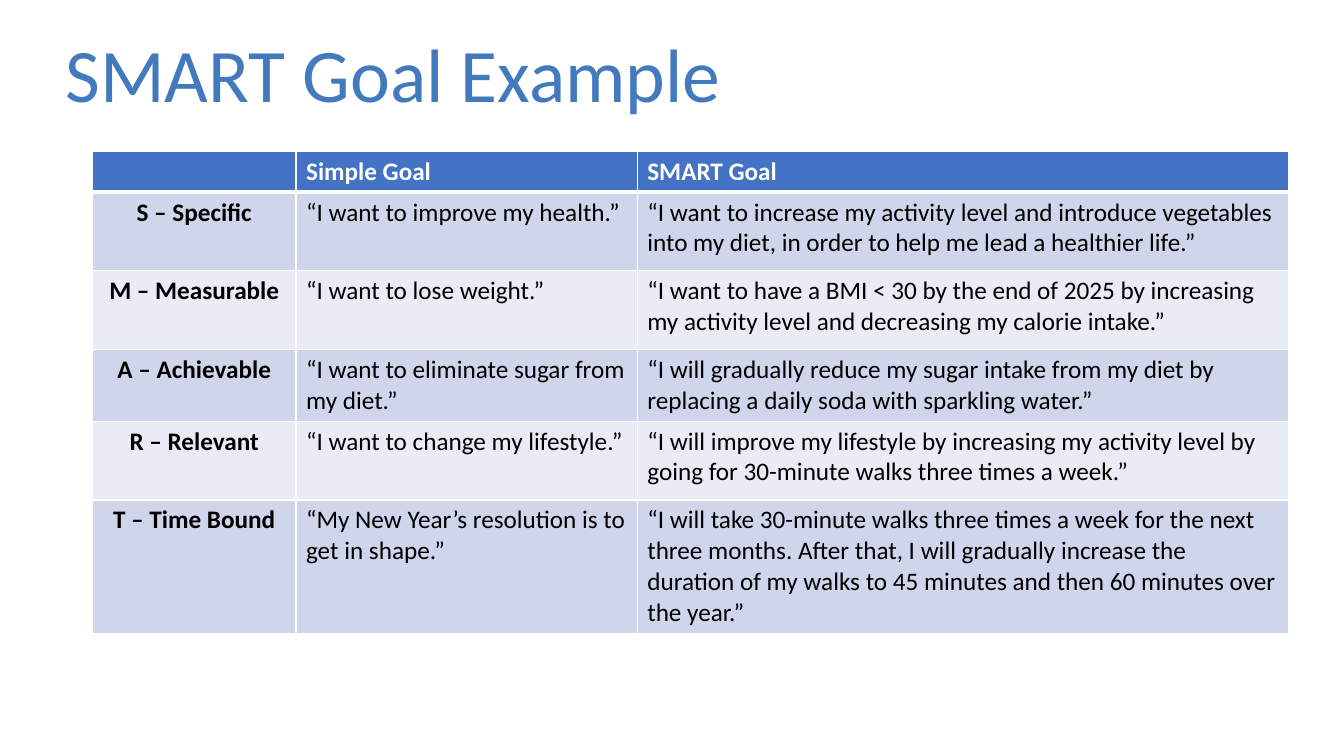
from lxml import etree
from pptx import Presentation, util as u
from pptx.dml import color
from pptx.enum import text
from pptx.oxml import ns

PX = 9525
FONT = "Calibri"
WHITE, BLACK = "FFFFFF", "000000"
TITLE_BLUE, HEADER_BLUE = "4379BD", "4472C4"
BANDS = ("CFD5EA", "E9EBF5")
COLUMN_WIDTHS = (194, 325, 620)
ROW_HEIGHTS = (38, 75, 75, 68, 75, 127)
GOALS = (
    ("", "Simple Goal", "SMART Goal"),
    ("S – Specific", "“I want to improve my health.”",
     "“I want to increase my activity level and introduce vegetables into my diet, "
     "in order to help me lead a healthier life.”"),
    ("M – Measurable", "“I want to lose weight.”",
     "“I want to have a BMI < 30 by the end of 2025 by increasing my activity level "
     "and decreasing my calorie intake.”"),
    ("A – Achievable", "“I want to eliminate sugar from my diet.”",
     "“I will gradually reduce my sugar intake from my diet by replacing a daily soda "
     "with sparkling water.”"),
    ("R – Relevant", "“I want to change my lifestyle.”",
     "“I will improve my lifestyle by increasing my activity level by going for "
     "30-minute walks three times a week.”"),
    ("T – Time Bound", "“My New Year’s resolution is to get in shape.”",
     "“I will take 30-minute walks three times a week for the next three months. "
     "After that, I will gradually increase the duration of my walks to 45 minutes "
     "and then 60 minutes over the year.”"),
)


def px(length):
    """Turn whole pixels into EMU."""
    return u.Emu(length * PX)


def rgb(hex_code):
    """Turn a hex string into a colour."""
    return color.RGBColor.from_string(hex_code)


def add_run(paragraph, words, size, hex_code, bold=False):
    """Add one formatted run to a paragraph."""
    run = paragraph.add_run()
    run.text = words
    run.font.name = FONT
    run.font.size = u.Pt(size)
    run.font.bold = bold
    run.font.color.rgb = rgb(hex_code)


def add_border(cell, side, points):
    """Draw one white side of a cell."""
    properties = cell._tc.get_or_add_tcPr()
    line = etree.SubElement(properties, ns.qn(f"a:ln{side}"), w=str(u.Pt(points)))
    solid = etree.SubElement(line, ns.qn("a:solidFill"))
    etree.SubElement(solid, ns.qn("a:srgbClr"), val=WHITE)


def format_cell(cell, words, row, column):
    """Fill a goal cell with its band, borders and words."""
    header = row == 0
    for side in "LRTB":
        thick = (side == "B" and header) or (side == "T" and row == 1)
        add_border(cell, side, 3 if thick else 1)
    cell.fill.solid()
    cell.fill.fore_color.rgb = rgb(HEADER_BLUE if header else BANDS[(row - 1) % 2])
    paragraph = cell.text_frame.paragraphs[0]
    if column == 0 and not header:
        paragraph.alignment = text.PP_ALIGN.CENTER
    if words:
        add_run(paragraph, words, 18, WHITE if header else BLACK, header or column == 0)


def add_title(slide, words):
    """Place and format the slide title."""
    title = slide.shapes.title
    title.left, title.top, title.width, title.height = map(px, (53, 5, 1104, 139))
    frame = title.text_frame
    frame.word_wrap = True
    frame.auto_size = text.MSO_AUTO_SIZE.NONE
    frame.vertical_anchor = text.MSO_ANCHOR.MIDDLE
    paragraph = frame.paragraphs[0]
    paragraph.alignment = text.PP_ALIGN.LEFT
    paragraph.line_spacing = 0.9
    add_run(paragraph, words, 54, TITLE_BLUE)


def add_goal_table(slide):
    """Add the table comparing simple and SMART goals."""
    bounds = map(px, (88, 144, sum(COLUMN_WIDTHS), sum(ROW_HEIGHTS)))
    goals = slide.shapes.add_table(len(GOALS), len(COLUMN_WIDTHS), *bounds).table
    for column, width in zip(goals.columns, COLUMN_WIDTHS):
        column.width = px(width)
    for row, height in zip(goals.rows, ROW_HEIGHTS):
        row.height = px(height)
    for row, entries in enumerate(GOALS):
        for column, words in enumerate(entries):
            format_cell(goals.cell(row, column), words, row, column)


def main():
    """Build and save the SMART goal slide."""
    deck = Presentation()
    deck.slide_width, deck.slide_height = px(1280), px(720)
    slide = deck.slides.add_slide(deck.slide_layouts[5])
    add_title(slide, "SMART Goal Example")
    add_goal_table(slide)
    deck.save("out.pptx")


if __name__ == "__main__":
    main()
